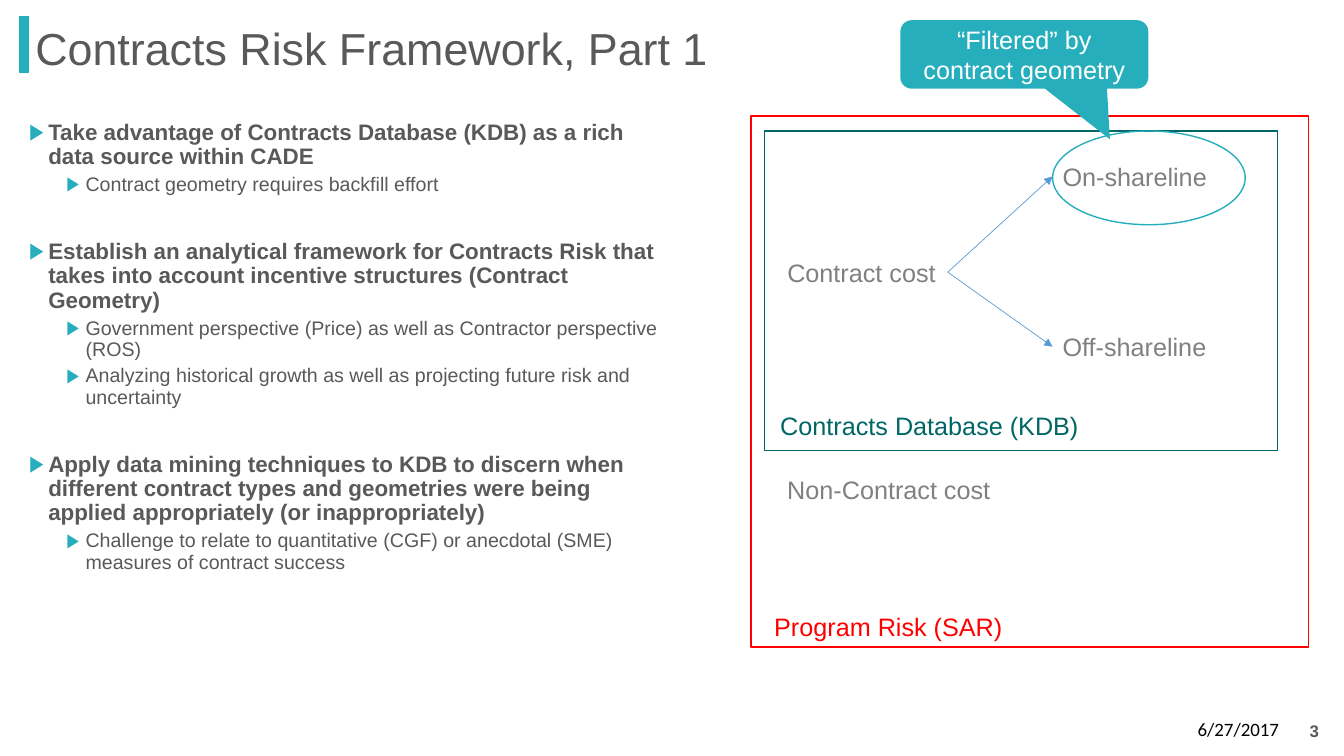
"""Build the contracts risk framework slide."""
import dataclasses
import typing

import lxml.etree
import pptx
import pptx.dml.color
import pptx.enum.shapes
import pptx.enum.text
import pptx.oxml.ns
import pptx.util

Inches = pptx.util.Inches
Pt = pptx.util.Pt
Align = pptx.enum.text.PP_ALIGN
Anchor = pptx.enum.text.MSO_ANCHOR
Fit = pptx.enum.text.MSO_AUTO_SIZE
Kind = pptx.enum.shapes.MSO_SHAPE
Wire = pptx.enum.shapes.MSO_CONNECTOR
qn = pptx.oxml.ns.qn


@dataclasses.dataclass(frozen=True)
class Theme:
    teal: str = "26AEBD"
    dark: str = "595959"
    grey: str = "808080"
    red: str = "FF0000"
    green: str = "006666"
    blue: str = "5B9BD5"
    white: str = "FFFFFF"
    black: str = "000000"
    font: str = "Arial"
    date_font: str = "Calibri"
    title: float = 32
    label: float = 18
    point: float = 16
    detail: float = 14
    date: float = 13.5
    number: float = 12


THEME = Theme()


class Box(typing.NamedTuple):
    left: float
    top: float
    width: float
    height: float

    def place(self) -> list:
        return [Inches(side) for side in self]


@dataclasses.dataclass(frozen=True)
class Label:
    text: str
    box: Box
    color: str = THEME.grey
    size: float = THEME.label
    font: str = THEME.font
    bold: bool = False
    align: Align = Align.LEFT
    anchor: Anchor = Anchor.TOP
    wrap: bool = False


@dataclasses.dataclass(frozen=True)
class Frame:
    kind: Kind
    box: Box
    color: str


@dataclasses.dataclass(frozen=True)
class Point:
    text: str
    details: tuple[str, ...]


TITLE = Label("Contracts Risk Framework, Part 1", Box(0.25, 0.06, 10.37, 0.82),
              THEME.dark, THEME.title, anchor=Anchor.MIDDLE, wrap=True)
COST = Label("Contract cost", Box(7.71, 2.5, 1.69, 0.4))
SHARES = (
    Label("On-shareline", Box(10.44, 1.55, 1.65, 0.4)),
    Label("Off-shareline", Box(10.44, 3.24, 1.64, 0.4)),
)
LABELS = (
    Label("3", Box(12.68, 7, 0.5, 0.5), THEME.dark, THEME.number, bold=True,
          align=Align.RIGHT, anchor=Anchor.MIDDLE, wrap=True),
    Label("6/27/2017", Box(11.78, 7.07, 1.55, 0.4), THEME.black, THEME.date,
          THEME.date_font, wrap=True),
    Label("Non-Contract cost", Box(7.71, 4.66, 2.24, 0.4)),
    Label("Program Risk (SAR)", Box(7.58, 6.02, 2.49, 0.4), THEME.red),
    Label("Contracts Database (KDB)", Box(7.64, 4.02, 3.19, 0.4), THEME.green),
)
FRAMES = (
    Frame(Kind.RECTANGLE, Box(7.45, 1.15, 5.53, 5.27), THEME.red),
    Frame(Kind.RECTANGLE, Box(7.58, 1.3, 5.09, 3.17), THEME.green),
    Frame(Kind.OVAL, Box(10.44, 1.3, 1.91, 0.93), THEME.teal),
)
CALLOUT = Label("“Filtered” by contract geometry", Box(8.93, 0.2, 2.46, 0.68),
                THEME.white, align=Align.CENTER, anchor=Anchor.MIDDLE, wrap=True)
POINTS = (
    Point("Take advantage of Contracts Database (KDB) as a rich data source within CADE",
          ("Contract geometry requires backfill effort",)),
    Point("Establish an analytical framework for Contracts Risk that takes into account "
          "incentive structures (Contract Geometry)",
          ("Government perspective (Price) as well as Contractor perspective (ROS)",
           "Analyzing historical growth as well as projecting future risk and uncertainty")),
    Point("Apply data mining techniques to KDB to discern when different contract types and "
          "geometries were being applied appropriately (or inappropriately)",
          ("Challenge to relate to quantitative (CGF) or anecdotal (SME) measures of "
           "contract success",)),
)


def rgb(color: str) -> pptx.dml.color.RGBColor:
    return pptx.dml.color.RGBColor.from_string(color)


def add_run(para, text: str, size: float, color: str, font: str = THEME.font,
            bold: bool = False) -> None:
    run = para.add_run()
    run.text = text
    run.font.name, run.font.size, run.font.bold = font, Pt(size), bold
    run.font.color.rgb = rgb(color)


def write(shape, label: Label) -> None:
    frame = shape.text_frame
    frame.word_wrap = label.wrap
    frame.auto_size = Fit.NONE if label.wrap else Fit.SHAPE_TO_FIT_TEXT
    frame.vertical_anchor = label.anchor
    para = frame.paragraphs[0]
    para.alignment = label.align
    add_run(para, label.text, label.size, label.color, label.font, label.bold)


def add_label(shapes, label: Label):
    shape = shapes.add_textbox(*label.box.place())
    write(shape, label)
    return shape


def add_frame(shapes, item: Frame) -> None:
    shape = shapes.add_shape(item.kind, *item.box.place())
    shape.shadow.inherit = False
    shape.fill.background()
    shape.line.color.rgb = rgb(item.color)
    shape.line.width = Pt(1)


def add_line(shapes, ends: tuple, color: str, width: float):
    line = shapes.add_connector(Wire.STRAIGHT, *[Inches(end) for end in ends])
    line.line.color.rgb = rgb(color)
    line.line.width = Pt(width)
    lxml.etree.SubElement(line._element.spPr, qn("a:effectLst"))
    return line


def add_arrow(shapes, start, end) -> None:
    line = add_line(shapes, (0, 0, 1, 1), THEME.blue, 0.5)
    line.begin_connect(start, 3)
    line.end_connect(end, 1)
    lxml.etree.SubElement(line.line._get_or_add_ln(), qn("a:tailEnd"), type="triangle")


def add_item(para, text: str, level: int, gap: float) -> None:
    para.level = level
    props = para._p.get_or_add_pPr()
    props.set("marL", str(Inches((0.19, 0.56)[level])))
    props.set("indent", str(Inches(-0.19)))
    tint = lxml.etree.SubElement(props, qn("a:buClr"))
    lxml.etree.SubElement(tint, qn("a:srgbClr"), val=THEME.teal)
    lxml.etree.SubElement(props, qn("a:buFont"), typeface=THEME.font)
    lxml.etree.SubElement(props, qn("a:buChar"), char="▶")
    para.line_spacing = 0.9
    para.space_before = Pt(gap)
    add_run(para, text, (THEME.point, THEME.detail)[level], THEME.dark, bold=level == 0)


def add_points(shapes, box: Box) -> None:
    frame = shapes.add_textbox(*box.place()).text_frame
    frame.word_wrap = True
    for rank, point in enumerate(POINTS):
        para = frame.add_paragraph() if rank else frame.paragraphs[0]
        add_item(para, point.text, 0, 32 if rank else 0)
        for detail in point.details:
            add_item(frame.add_paragraph(), detail, 1, 3.8)


def add_callout(shapes) -> None:
    shape = shapes.add_shape(Kind.ROUNDED_RECTANGULAR_CALLOUT, *CALLOUT.box.place())
    shape.shadow.inherit = False
    shape.fill.solid()
    shape.fill.fore_color.rgb = rgb(THEME.teal)
    shape.line.fill.background()
    for rank, value in enumerate((0.345, 1.238, 0.167)):
        shape.adjustments[rank] = value
    write(shape, CALLOUT)


def main() -> None:
    deck = pptx.Presentation()
    deck.slide_width, deck.slide_height = Inches(13.33), Inches(7.5)
    shapes = deck.slides.add_slide(deck.slide_layouts[5]).shapes
    title = shapes.title
    title.left, title.top, title.width, title.height = TITLE.box.place()
    write(title, TITLE)
    add_line(shapes, (0.24, 0.16, 0.24, 0.72), THEME.teal, 7.5)
    add_points(shapes, Box(0.19, 1.15, 6.58, 5.27))
    cost = add_label(shapes, COST)
    for share in SHARES:
        add_arrow(shapes, cost, add_label(shapes, share))
    for label in LABELS:
        add_label(shapes, label)
    for item in FRAMES:
        add_frame(shapes, item)
    add_callout(shapes)
    deck.save("out.pptx")


if __name__ == "__main__":
    main()
